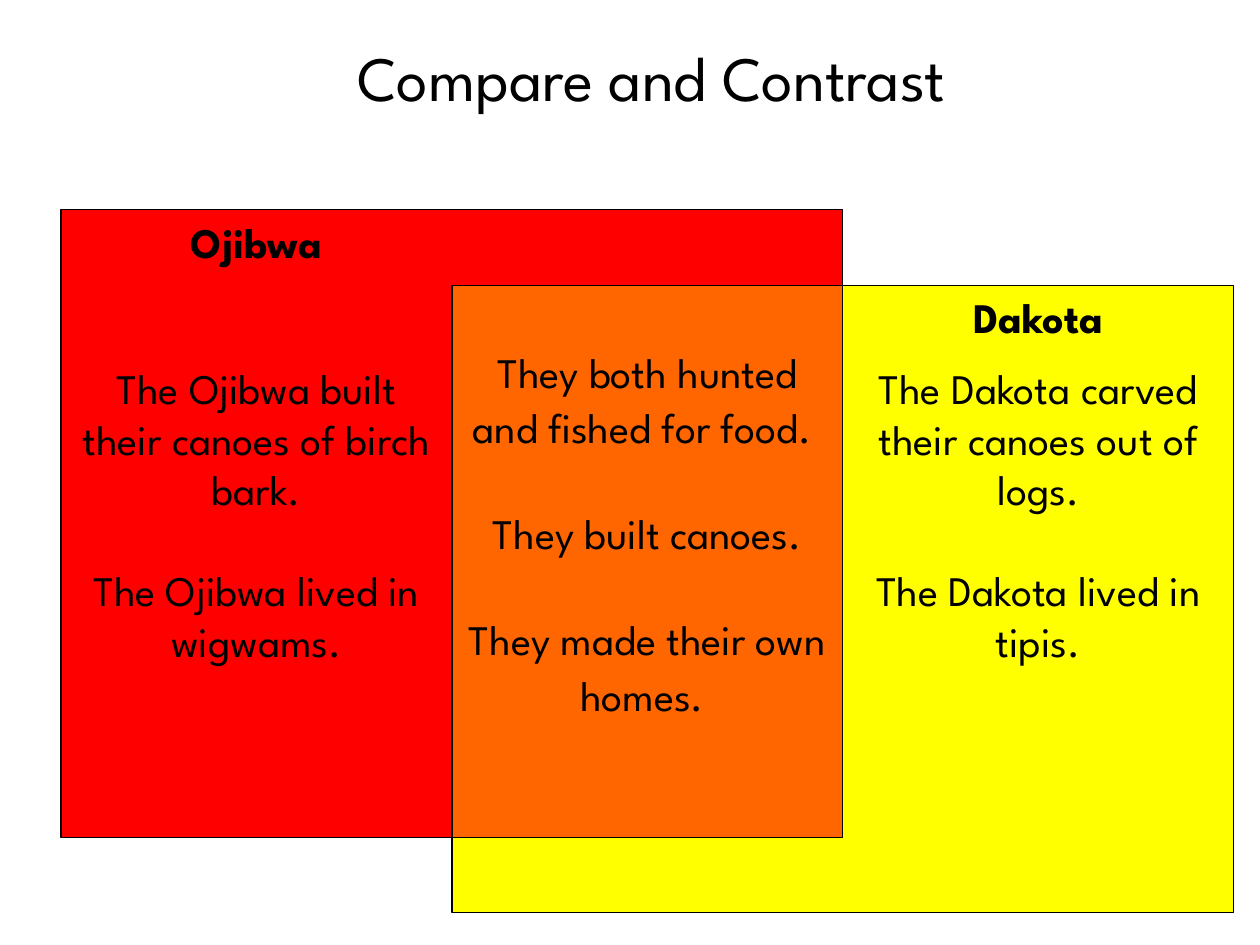
from dataclasses import dataclass

from pptx import Presentation
from pptx.dml.color import RGBColor
from pptx.enum.shapes import MSO_SHAPE
from pptx.enum.text import MSO_AUTO_SIZE, PP_ALIGN
from pptx.slide import Slide
from pptx.util import Cm, Pt

FONT = "League Spartan"
BLACK = "000000"

# Three equal columns; the second panel sits one step lower than the first
COLUMN = 7.88
LEFT, MIDDLE, RIGHT = (1.23 + COLUMN * index for index in range(3))
STEP = 1.52
TOP = 4.23
PANEL_HEIGHT = 12.65
FACTS_TOP = 7.19


@dataclass
class Panel:
    left: float
    top: float
    width: float
    height: float
    fill: str


@dataclass
class TextBlock:
    left: float
    top: float
    width: float
    height: float
    lines: list[str]
    size: float = 24
    bold: bool = False
    line_spacing: float = 1.0
    left_inset: float = 0.25


def color(value: str) -> RGBColor:
    return RGBColor.from_string(value)


def draw_panel(page: Slide, panel: Panel) -> None:
    box = page.shapes.add_shape(
        MSO_SHAPE.RECTANGLE,
        Cm(panel.left), Cm(panel.top), Cm(panel.width), Cm(panel.height),
    )
    box.shadow.inherit = False
    box.fill.solid()
    box.fill.fore_color.rgb = color(panel.fill)
    box.line.color.rgb = color(BLACK)
    box.line.width = Pt(0.75)


def draw_text(page: Slide, block: TextBlock) -> None:
    box = page.shapes.add_textbox(
        Cm(block.left), Cm(block.top), Cm(block.width), Cm(block.height)
    )
    frame = box.text_frame
    frame.text = "\n".join(block.lines)
    frame.word_wrap = True
    frame.auto_size = MSO_AUTO_SIZE.SHAPE_TO_FIT_TEXT
    frame.margin_left = Cm(block.left_inset)
    for index, para in enumerate(frame.paragraphs):
        para.alignment = PP_ALIGN.CENTER
        para.line_spacing = block.line_spacing
        if index:
            para.space_before = Pt(28.9)
        for span in para.runs:
            span.font.name = FONT
            span.font.size = Pt(block.size)
            span.font.bold = block.bold
            span.font.color.rgb = color(BLACK)


def main() -> None:
    deck = Presentation()
    deck.slide_width, deck.slide_height = Cm(25.4), Cm(19.05)
    page = deck.slides.add_slide(deck.slide_layouts[6])

    # Overlapping panels, with the shared area on top
    lower_top = TOP + STEP
    for panel in (
        Panel(LEFT, TOP, 2 * COLUMN, PANEL_HEIGHT, "FF0000"),
        Panel(MIDDLE, lower_top, 2 * COLUMN, PANEL_HEIGHT, "FFFF00"),
        Panel(MIDDLE, lower_top, COLUMN, PANEL_HEIGHT - STEP, "FF6600"),
    ):
        draw_panel(page, panel)

    # Title, group names and facts
    for block in (
        TextBlock(0, 0.66, 25.4, 1.8, ["Compare and Contrast"],
                  size=36, left_inset=1.12),
        TextBlock(LEFT, TOP, COLUMN, 1.27, ["Ojibwa"], bold=True),
        TextBlock(RIGHT, lower_top, COLUMN, 1.27, ["Dakota"], bold=True),
        TextBlock(LEFT, FACTS_TOP, COLUMN, 6.4, [
            "The Ojibwa built their canoes of birch bark.",
            "The Ojibwa lived in wigwams.",
        ]),
        TextBlock(MIDDLE, 6.76, COLUMN, 9.07, [
            "They both hunted and fished for food. ",
            "They built canoes.",
            "They made their own homes. ",
        ], line_spacing=1.1),
        TextBlock(RIGHT, FACTS_TOP, COLUMN, 6.4, [
            "The Dakota carved their canoes out of logs.",
            "The Dakota lived in tipis.",
        ]),
    ):
        draw_text(page, block)

    deck.save("out.pptx")


if __name__ == "__main__":
    main()
